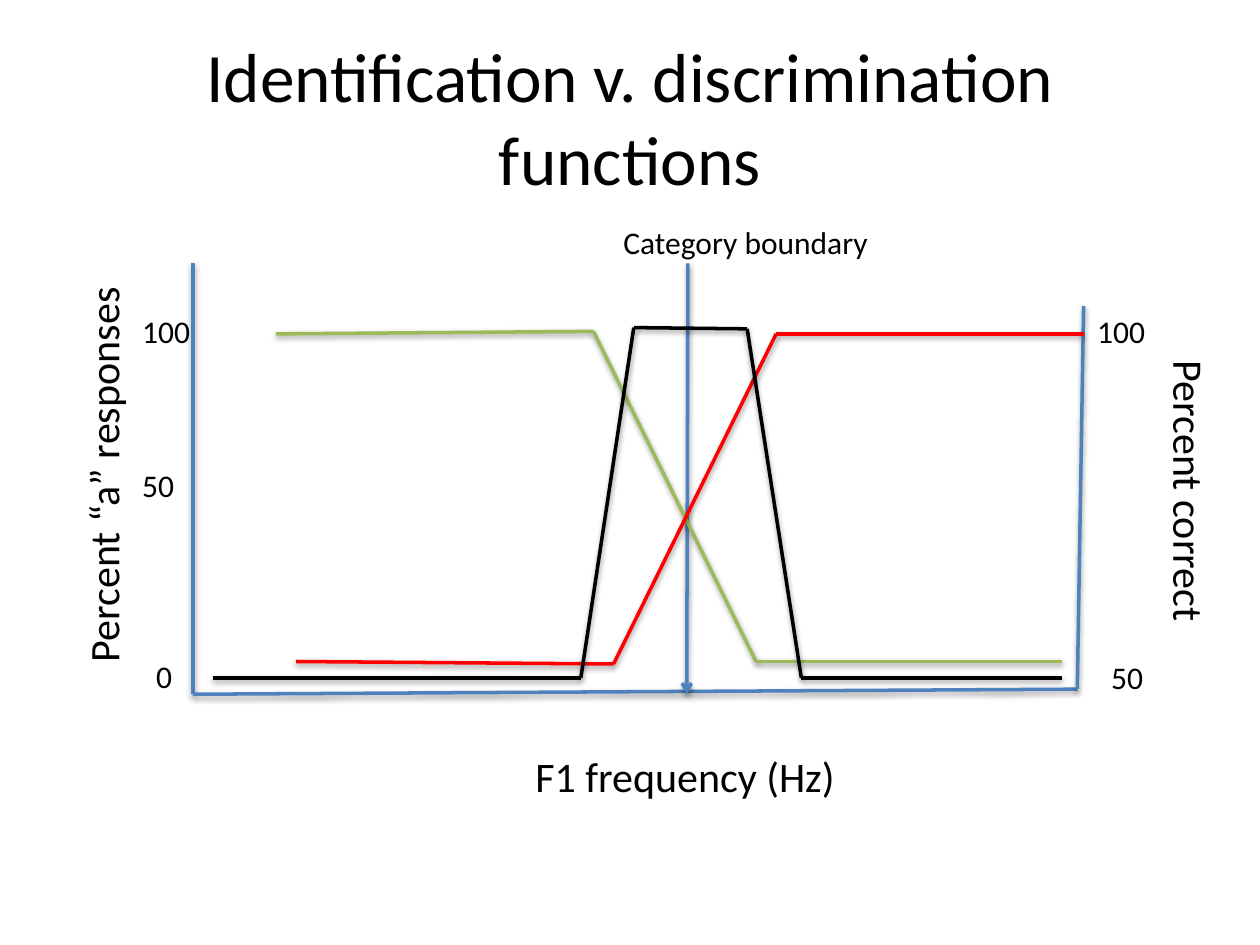
"""Build a slide comparing identification and discrimination functions."""
from dataclasses import dataclass
from itertools import pairwise

from lxml import etree
from pptx import Presentation
from pptx import util as u
from pptx.dml.color import RGBColor
from pptx.enum import shapes, text
from pptx.oxml import parse_xml
from pptx.oxml.ns import nsdecls, qn

BLACK = RGBColor(0x00, 0x00, 0x00)
BLUE = RGBColor(0x4F, 0x81, 0xBD)
GREEN = RGBColor(0x9B, 0xBB, 0x59)
RED = RGBColor(0xFF, 0x00, 0x00)
TICK_SIZE = 18
TICK_LINE = 22
SHADOW = (
    f'<a:effectLst {nsdecls("a")}><a:outerShdw blurRad="40000" dist="20000" '
    'dir="5400000" rotWithShape="0"><a:srgbClr val="000000">'
    '<a:alpha val="38000"/></a:srgbClr></a:outerShdw></a:effectLst>'
)


@dataclass(frozen=True)
class Label:
    words: str
    left: float
    top: float
    width: float
    height: float
    size: float = 24
    rotation: int = 0
    wrap: bool = False


@dataclass(frozen=True)
class Tick:
    words: str
    skipped_lines: int = 0
    indent: float = 0


@dataclass(frozen=True)
class Scale:
    left: float
    ticks: tuple[Tick, ...]


@dataclass(frozen=True)
class Curve:
    color: RGBColor
    points: tuple[tuple[float, float], ...]
    arrow: bool = False


TITLE = Label("Identification v. discrimination functions", 0.5, 0.3, 9, 1.25, 39.6, wrap=True)
LABELS = (
    Label("F1 frequency (Hz)", 4.15, 5.91, 2.6, 0.5),
    Label("Percent “a” responses", -0.79, 3.5, 3.21, 0.5, rotation=270),
    Label("Percent correct", 8.3, 3.66, 2.29, 0.5, rotation=90),
    Label("Category boundary", 4.85, 1.72, 2.17, 0.4, 18),
)
SCALES = (
    Scale(1.03, (Tick("100"), Tick("50", 3), Tick("0", 4, 0.11))),
    Scale(8.61, (Tick("100"), Tick("50", 8, 0.11))),
)
AXES = Curve(BLUE, ((1.53, 2.09), (1.53, 5.51), (8.55, 5.47), (8.6, 2.43)))
CURVES = (
    Curve(BLUE, ((5.46, 2.09), (5.45, 5.51)), arrow=True),
    Curve(GREEN, ((2.19, 2.65), (4.71, 2.63), (6, 5.25), (8.43, 5.25))),
    Curve(RED, ((2.35, 5.25), (4.87, 5.27), (6.16, 2.65), (8.6, 2.65))),
    Curve(BLACK, ((1.69, 5.38), (4.61, 5.38), (5.03, 2.6), (5.93, 2.61), (6.36, 5.38), (8.43, 5.38))),
)


def write(para, words: str, size: float) -> None:
    """Add one formatted run to a paragraph."""
    span = para.add_run()
    span.text = words
    span.font.color.rgb = BLACK
    for name, value in {"name": "Calibri", "size": u.Pt(size)}.items():
        setattr(span.font, name, value)


def draw_label(page, label: Label, anchor=text.MSO_ANCHOR.TOP, align=text.PP_ALIGN.LEFT) -> None:
    """Draw a single-paragraph label."""
    box = page.shapes.add_textbox(*map(u.Inches, (label.left, label.top, label.width, label.height)))
    box.rotation = label.rotation
    for name, value in {"word_wrap": label.wrap, "vertical_anchor": anchor}.items():
        setattr(box.text_frame, name, value)
    para = box.text_frame.paragraphs[0]
    para.alignment = align
    write(para, label.words, label.size)


def draw_scale(page, scale: Scale) -> None:
    """Draw the tick values of one vertical axis."""
    box = page.shapes.add_textbox(*map(u.Inches, (scale.left, 2.43, 0.59, 3.13)))
    frame = box.text_frame
    frame.word_wrap = True
    for index, tick in enumerate(scale.ticks):
        para = frame.add_paragraph() if index else frame.paragraphs[0]
        para.space_before = u.Pt(tick.skipped_lines * TICK_LINE)
        para._p.get_or_add_pPr().set("marL", str(u.Inches(tick.indent)))
        write(para, tick.words, TICK_SIZE)


def draw_curve(page, curve: Curve) -> None:
    """Draw straight shadowed segments through the points of a curve."""
    for start, end in pairwise(curve.points):
        segment = page.shapes.add_connector(
            shapes.MSO_CONNECTOR.STRAIGHT, *map(u.Inches, (*start, *end))
        )
        segment.line.color.rgb = curve.color
        segment.line.width = u.Pt(2)
        if curve.arrow:
            etree.SubElement(segment.line._get_or_add_ln(), qn("a:tailEnd"), type="arrow")
        segment._element.spPr.append(parse_xml(SHADOW))


def main() -> None:
    """Create and save the deck."""
    deck = Presentation()
    deck.slide_width, deck.slide_height = u.Inches(10), u.Inches(7.5)
    page = deck.slides.add_slide(deck.slide_layouts[6])
    draw_label(page, TITLE, text.MSO_ANCHOR.MIDDLE, text.PP_ALIGN.CENTER)
    draw_curve(page, AXES)
    for label in LABELS:
        draw_label(page, label)
    for scale in SCALES:
        draw_scale(page, scale)
    for curve in CURVES:
        draw_curve(page, curve)
    deck.save("out.pptx")


if __name__ == "__main__":
    main()
